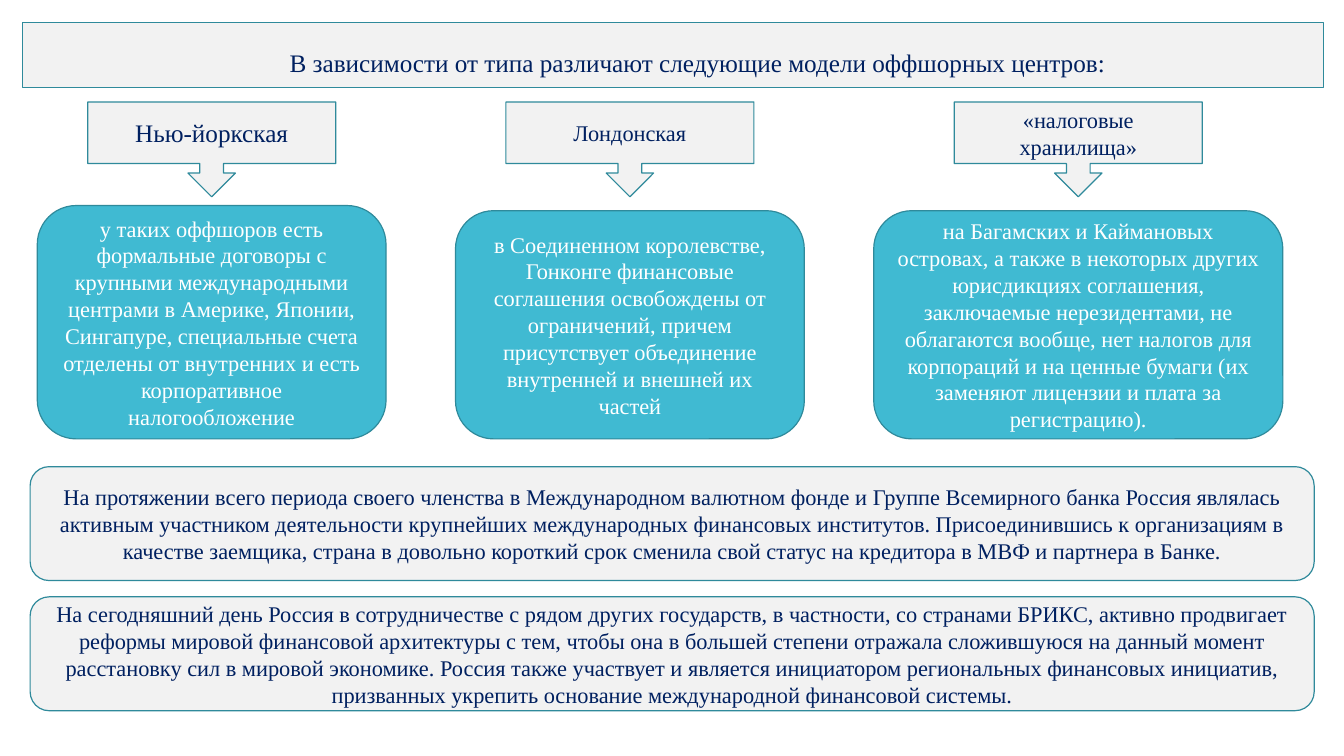
import lxml.etree
import pptx
import pptx.dml.color
import pptx.enum.shapes
import pptx.enum.text
import pptx.oxml.ns
import pptx.util

Cm = pptx.util.Cm
Pt = pptx.util.Pt
RGBColor = pptx.dml.color.RGBColor
SHAPES = pptx.enum.shapes.MSO_SHAPE
qn = pptx.oxml.ns.qn

GREY = RGBColor(0xF2, 0xF2, 0xF2)
TURQUOISE = RGBColor(0x40, 0xBA, 0xD2)
TEAL = RGBColor(0x2F, 0x8A, 0x9B)
NAVY = RGBColor(0x00, 0x20, 0x60)
WHITE = RGBColor(0xFF, 0xFF, 0xFF)
FONT = "Times New Roman"

HEADING = "В зависимости от типа различают следующие модели оффшорных центров:"
MODELS = [
    ("Нью-йоркская", 18, 5.18, 8.79,
     "у таких оффшоров есть формальные договоры с крупными международными центрами "
     "в Америке, Японии, Сингапуре, специальные счета отделены от внутренних "
     "и есть корпоративное налогообложение"),
    ("Лондонская", 16, 5.31, 8.79,
     "в Соединенном королевстве, Гонконге финансовые соглашения освобождены "
     "от ограничений, причем присутствует объединение внутренней и внешней их частей"),
    ("«налоговые хранилища»", 16, 5.31, 10.31,
     "на Багамских и Каймановых островах, а также в некоторых других юрисдикциях "
     "соглашения, заключаемые нерезидентами, не облагаются вообще, нет налогов "
     "для корпораций и на ценные бумаги (их заменяют лицензии и плата за регистрацию)."),
]
NOTES = [
    "На протяжении всего периода своего членства в Международном валютном фонде "
    "и Группе Всемирного банка Россия являлась активным участником деятельности "
    "крупнейших международных финансовых институтов. Присоединившись к организациям "
    "в качестве заемщика, страна в довольно короткий срок сменила свой статус "
    "на кредитора в МВФ и партнера в Банке.",
    "На сегодняшний день Россия в сотрудничестве с рядом других государств, "
    "в частности, со странами БРИКС, активно продвигает реформы мировой финансовой "
    "архитектуры с тем, чтобы она в большей степени отражала сложившуюся на данный "
    "момент расстановку сил в мировой экономике. Россия также участвует и является "
    "инициатором региональных финансовых инициатив, призванных укрепить основание "
    "международной финансовой системы.",
]


def format_shape(shape, text, fill, color, size):
    shape.shadow.inherit = False
    shape.fill.solid()
    shape.fill.fore_color.rgb = fill
    shape.line.color.rgb = TEAL
    shape.line.width = Pt(0.85)
    frame = shape.text_frame
    frame.text = text
    frame.word_wrap = True
    frame.auto_size = pptx.enum.text.MSO_AUTO_SIZE.NONE
    frame.vertical_anchor = pptx.enum.text.MSO_ANCHOR.MIDDLE
    paragraph = frame.paragraphs[0]
    paragraph.alignment = pptx.enum.text.PP_ALIGN.CENTER
    paragraph.font.name = FONT
    paragraph.font.size = Pt(size)
    paragraph.font.color.rgb = color


def add_box(slide, kind, left, top, width, height, text, fill, color, size=16):
    shape = slide.shapes.add_shape(kind, left, top, width, height)
    format_shape(shape, text, fill, color, size)


def place_heading(slide, left, top, width, height):
    title = slide.shapes.title
    title.left, title.top, title.width, title.height = left, top, width, height
    geometry = lxml.etree.SubElement(title._element.spPr, qn("a:prstGeom"), prst="roundRect")
    lxml.etree.SubElement(geometry, qn("a:avLst"))
    format_shape(title, HEADING, GREY, NAVY, 18)
    paragraph = title.text_frame.paragraphs[0]
    paragraph.line_spacing = 1.5
    paragraph._p.get_or_add_pPr().set("indent", str(Cm(1.25)))


def add_models(slide, left, top, pitch, bottom):
    callout_width, callout_height = Cm(6.25), Cm(2.39)
    for index, (name, size, box_top, box_width, description) in enumerate(MODELS):
        box_left = left + index * pitch
        callout_left = box_left + (Cm(box_width) - callout_width) // 2
        add_box(slide, SHAPES.DOWN_ARROW_CALLOUT, callout_left, top,
                callout_width, callout_height, name, GREY, NAVY, size)
        add_box(slide, SHAPES.ROUNDED_RECTANGLE, box_left, Cm(box_top),
                Cm(box_width), bottom - Cm(box_top), description, TURQUOISE, WHITE)


def add_notes(slide, left, top, width, height, gap):
    for index, text in enumerate(NOTES):
        add_box(slide, SHAPES.ROUNDED_RECTANGLE, left, top + index * (height + gap),
                width, height, text, GREY, NAVY)


def main():
    presentation = pptx.Presentation()
    presentation.slide_width = Cm(33.87)
    presentation.slide_height = Cm(19.05)
    slide = presentation.slides.add_slide(presentation.slide_layouts[5])
    place_heading(slide, Cm(0.56), Cm(0.56), Cm(32.79), Cm(1.65))
    add_models(slide, Cm(0.94), Cm(2.57), Cm(10.54), Cm(11.06))
    add_notes(slide, Cm(0.76), Cm(11.76), Cm(32.36), Cm(2.87), Cm(0.41))
    presentation.save("out.pptx")


if __name__ == "__main__":
    main()
